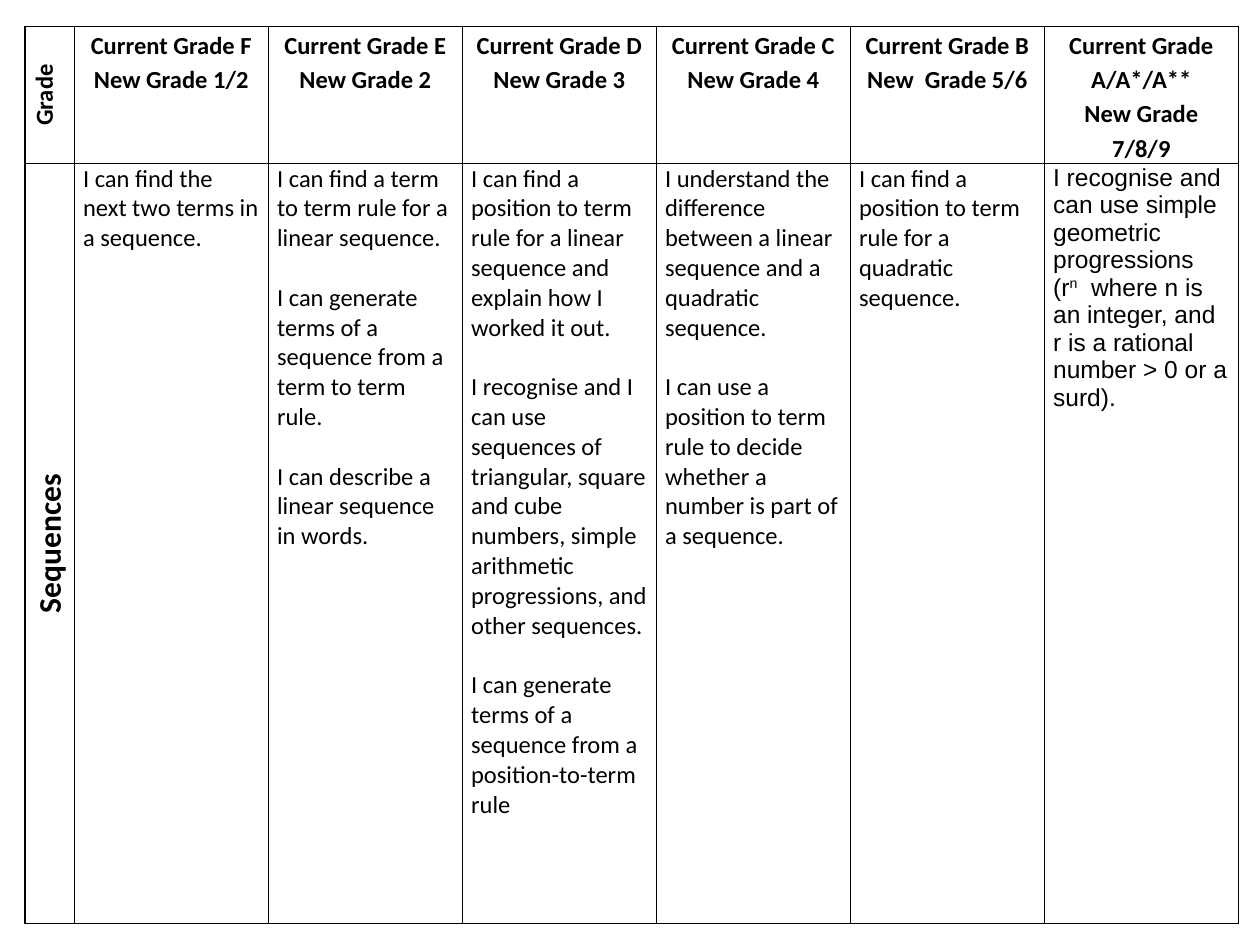
from dataclasses import dataclass

from lxml import etree
from pptx import Presentation
from pptx.dml.color import RGBColor
from pptx.enum.text import MSO_ANCHOR, PP_ALIGN
from pptx.oxml.ns import qn
from pptx.util import Inches, Pt

CENTER = PP_ALIGN.CENTER
LEFT = PP_ALIGN.LEFT
TOP = MSO_ANCHOR.TOP
BOTTOM = MSO_ANCHOR.BOTTOM
BLANK_LAYOUT = 6
BLACK = "000000"
LABEL_WIDTH, GRADE_WIDTH = 0.39, 1.54
ROW_HEIGHTS = (1.09, 6.03)


@dataclass(frozen=True)
class Style:
    size: float = 14
    font: str = "Calibri"
    bold: bool = False
    align: PP_ALIGN = LEFT
    line_spacing: float = 1.0
    gap: float = 0
    vertical: bool = False
    anchor: MSO_ANCHOR = TOP


@dataclass(frozen=True)
class Grade:
    heading: tuple[str, ...]
    statements: tuple[str, ...]
    style: Style


HEADING = Style(bold=True, align=CENTER, line_spacing=1.15)
GRADE_LABEL = Style(bold=True, align=CENTER, line_spacing=1.15, vertical=True)
TOPIC_LABEL = Style(size=18, bold=True, align=CENTER, line_spacing=1.15,
                    vertical=True, anchor=BOTTOM)
STATEMENT = Style(gap=17)
TOP_STATEMENT = Style(font="Arial")

GRADES = (
    Grade(("Current Grade F", "New Grade 1/2"),
          ("I can find the next two terms in a sequence.",), STATEMENT),
    Grade(("Current Grade E", "New Grade 2"),
          ("I can find a term to term rule for a linear sequence.",
           "I can generate terms of a sequence from a term to term rule.",
           "I can describe a linear sequence in words."), STATEMENT),
    Grade(("Current Grade D", "New Grade 3"),
          ("I can find a position to term rule for a linear sequence and "
           "explain how I worked it out.",
           "I recognise and I can use sequences of triangular, square and cube "
           "numbers, simple arithmetic progressions, and other sequences.",
           "I can generate terms of a sequence from a position-to-term rule"),
          STATEMENT),
    Grade(("Current Grade C", "New Grade 4"),
          ("I understand the difference between a linear sequence and a "
           "quadratic sequence.",
           "I can use a position to term rule to decide whether a number is "
           "part of a sequence."), STATEMENT),
    Grade(("Current Grade B", "New  Grade 5/6"),
          ("I can find a position to term rule for a quadratic sequence.",),
          STATEMENT),
    Grade(("Current Grade A/A*/A**", "New Grade 7/8/9"),
          ("I recognise and can use simple geometric progressions",
           "(r^n^  where n is an integer, and r is a rational number > 0 or a "
           "surd)."), TOP_STATEMENT),
)


def color(value: str) -> RGBColor:
    return RGBColor.from_string(value)


def add_borders(cell) -> None:
    properties = cell._tc.get_or_add_tcPr()
    for index, side in enumerate(("a:lnL", "a:lnR", "a:lnT", "a:lnB")):
        line = etree.Element(qn(side), w=str(Pt(1)))
        fill = etree.SubElement(line, qn("a:solidFill"))
        etree.SubElement(fill, qn("a:srgbClr"), val=BLACK)
        properties.insert(index, line)


def add_spans(paragraph, text: str) -> None:
    for index, part in enumerate(text.split("^")):
        span = paragraph.add_run()
        span.text = part
        if index % 2:
            span._r.get_or_add_rPr().set("baseline", "30000")


def fill_cell(cell, lines: tuple[str, ...], style: Style) -> None:
    cell.fill.background()
    add_borders(cell)
    cell.margin_left = cell.margin_right = Inches(0.07)
    cell.margin_top = cell.margin_bottom = Inches(0)
    cell.vertical_anchor = style.anchor
    if style.vertical:
        cell._tc.get_or_add_tcPr().set("vert", "vert270")
    frame = cell.text_frame
    for index, text in enumerate(lines):
        paragraph = frame.add_paragraph() if index else frame.paragraphs[0]
        add_spans(paragraph, text)
        paragraph.alignment = style.align
        paragraph.line_spacing = style.line_spacing
        paragraph.space_before = Pt(style.gap if index else 0)
        paragraph.font.name = style.font
        paragraph.font.size = Pt(style.size)
        paragraph.font.bold = style.bold
        paragraph.font.color.rgb = color(BLACK)


def add_grade_table(page) -> None:
    widths = [LABEL_WIDTH] + [GRADE_WIDTH] * len(GRADES)
    table = page.shapes.add_table(
        len(ROW_HEIGHTS), len(widths), Inches(0.2), Inches(0.21),
        Inches(sum(widths)), Inches(sum(ROW_HEIGHTS))).table
    table.first_row = table.horz_banding = False
    for column, width in zip(table.columns, widths):
        column.width = Inches(width)
    for row, height in zip(table.rows, ROW_HEIGHTS):
        row.height = Inches(height)
    fill_cell(table.cell(0, 0), ("Grade",), GRADE_LABEL)
    fill_cell(table.cell(1, 0), ("Sequences",), TOPIC_LABEL)
    for index, grade in enumerate(GRADES, start=1):
        fill_cell(table.cell(0, index), grade.heading, HEADING)
        fill_cell(table.cell(1, index), grade.statements, grade.style)


def main() -> None:
    deck = Presentation()
    deck.slide_width = Inches(10)
    deck.slide_height = Inches(7.5)
    page = deck.slides.add_slide(deck.slide_layouts[BLANK_LAYOUT])
    add_grade_table(page)
    deck.save("out.pptx")


if __name__ == "__main__":
    main()
